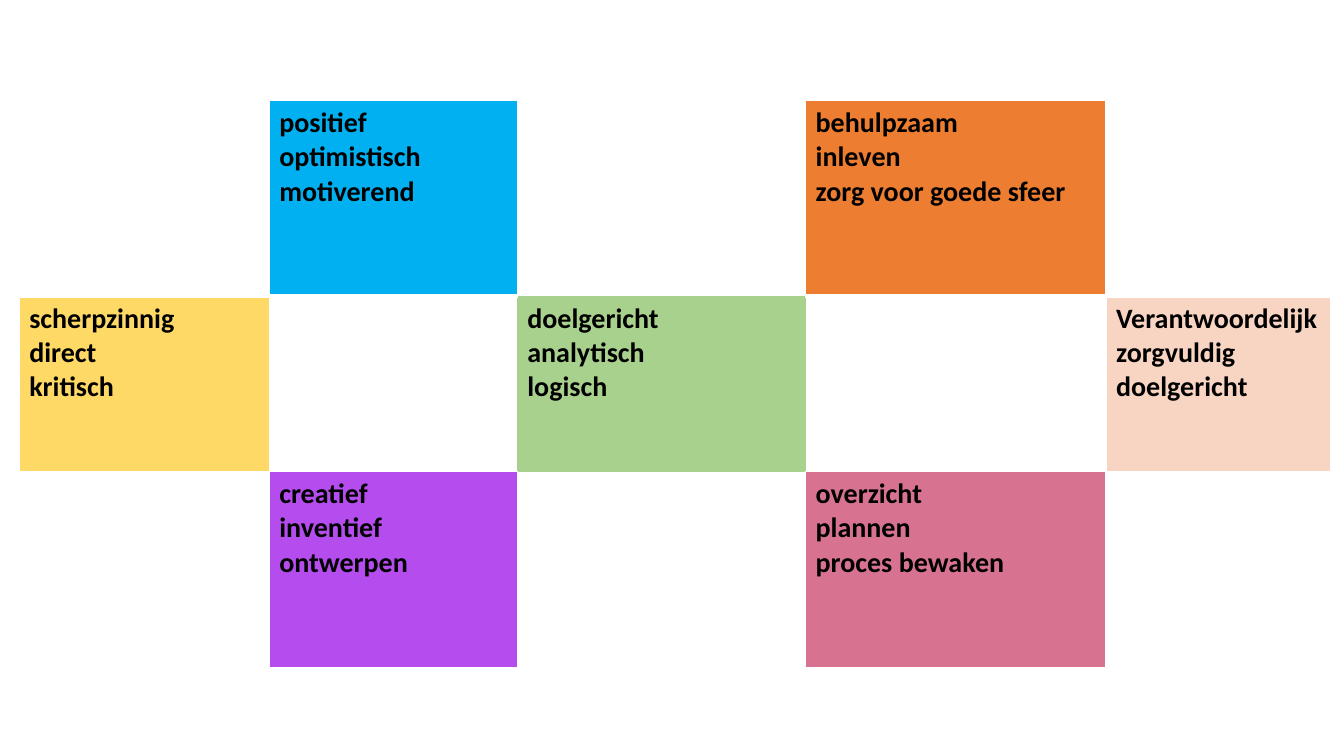
from dataclasses import dataclass

from lxml import etree
from pptx import Presentation
from pptx.dml.color import RGBColor
from pptx.oxml.ns import qn
from pptx.table import _Cell
from pptx.util import Emu, Pt

EMU_PER_PX = 9144
BLANK_LAYOUT = 6
FONT_NAME = "Calibri"
FONT_SIZE = 20
TEXT_COLOUR = "000000"
BORDER_COLOUR = "FFFFFF"
THIN, THICK = 1, 3
TABLE_LEFT, TABLE_TOP = 19, 100
COLUMN_WIDTHS = [248, 246, 286, 298, 223]
ROW_HEIGHTS = [194, 174, 194]
CENTRE = (1, 2)


@dataclass(frozen=True)
class Role:
    row: int
    column: int
    colour: str
    qualities: tuple[str, ...]


ROLES = [
    Role(0, 1, "00B0F0", ("positief", "optimistisch", "motiverend")),
    Role(0, 3, "ED7D31", ("behulpzaam", "inleven", "zorg voor goede sfeer")),
    Role(1, 0, "FFD966", ("scherpzinnig", "direct", "kritisch")),
    Role(1, 2, "A9D18E", ("doelgericht", "analytisch", "logisch")),
    Role(1, 4, "F8D5C2", ("Verantwoordelijk", "zorgvuldig", "doelgericht")),
    Role(2, 1, "B44CEE", ("creatief", "inventief", "ontwerpen")),
    Role(2, 3, "D77390", ("overzicht", "plannen", "proces bewaken")),
]


def px(length: int) -> Emu:
    return Emu(length * EMU_PER_PX)


def rgb(colour: str) -> RGBColor:
    return RGBColor.from_string(colour)


def set_borders(cell: _Cell, row: int, column: int) -> None:
    """Draw white borders, except on the edges around the centre cell."""
    properties = cell._tc.get_or_add_tcPr()
    neighbours = {
        "L": (row, column - 1),
        "R": (row, column + 1),
        "T": (row - 1, column),
        "B": (row + 1, column),
    }
    for side, neighbour in neighbours.items():
        line = etree.SubElement(properties, qn(f"a:ln{side}"))
        if CENTRE in ((row, column), neighbour):
            etree.SubElement(line, qn("a:noFill"))
            continue
        below_first_row = (side, row) in (("B", 0), ("T", 1))
        line.set("w", str(Pt(THICK if below_first_row else THIN)))
        fill = etree.SubElement(line, qn("a:solidFill"))
        etree.SubElement(fill, qn("a:srgbClr"), val=BORDER_COLOUR)


def write_role(cell: _Cell, role: Role) -> None:
    cell.fill.solid()
    cell.fill.fore_color.rgb = rgb(role.colour)
    frame = cell.text_frame
    for index, quality in enumerate(role.qualities):
        paragraph = frame.add_paragraph() if index else frame.paragraphs[0]
        run = paragraph.add_run()
        run.text = quality
        run.font.name = FONT_NAME
        run.font.size = Pt(FONT_SIZE)
        run.font.bold = True
        run.font.color.rgb = rgb(TEXT_COLOUR)


def main() -> None:
    presentation = Presentation()
    presentation.slide_width = px(1333)
    presentation.slide_height = px(750)
    slide = presentation.slides.add_slide(presentation.slide_layouts[BLANK_LAYOUT])

    # Checkerboard grid
    board = slide.shapes.add_table(
        len(ROW_HEIGHTS), len(COLUMN_WIDTHS),
        px(TABLE_LEFT), px(TABLE_TOP),
        px(sum(COLUMN_WIDTHS)), px(sum(ROW_HEIGHTS)),
    ).table
    board.first_row = False
    board.horz_banding = False
    for column, width in zip(board.columns, COLUMN_WIDTHS):
        column.width = px(width)
    for row, height in zip(board.rows, ROW_HEIGHTS):
        row.height = px(height)

    # Borders and empty squares
    for row in range(len(ROW_HEIGHTS)):
        for column in range(len(COLUMN_WIDTHS)):
            cell = board.cell(row, column)
            set_borders(cell, row, column)
            cell.fill.background()

    # Coloured squares with qualities
    for role in ROLES:
        write_role(board.cell(role.row, role.column), role)

    presentation.save("out.pptx")


if __name__ == "__main__":
    main()
